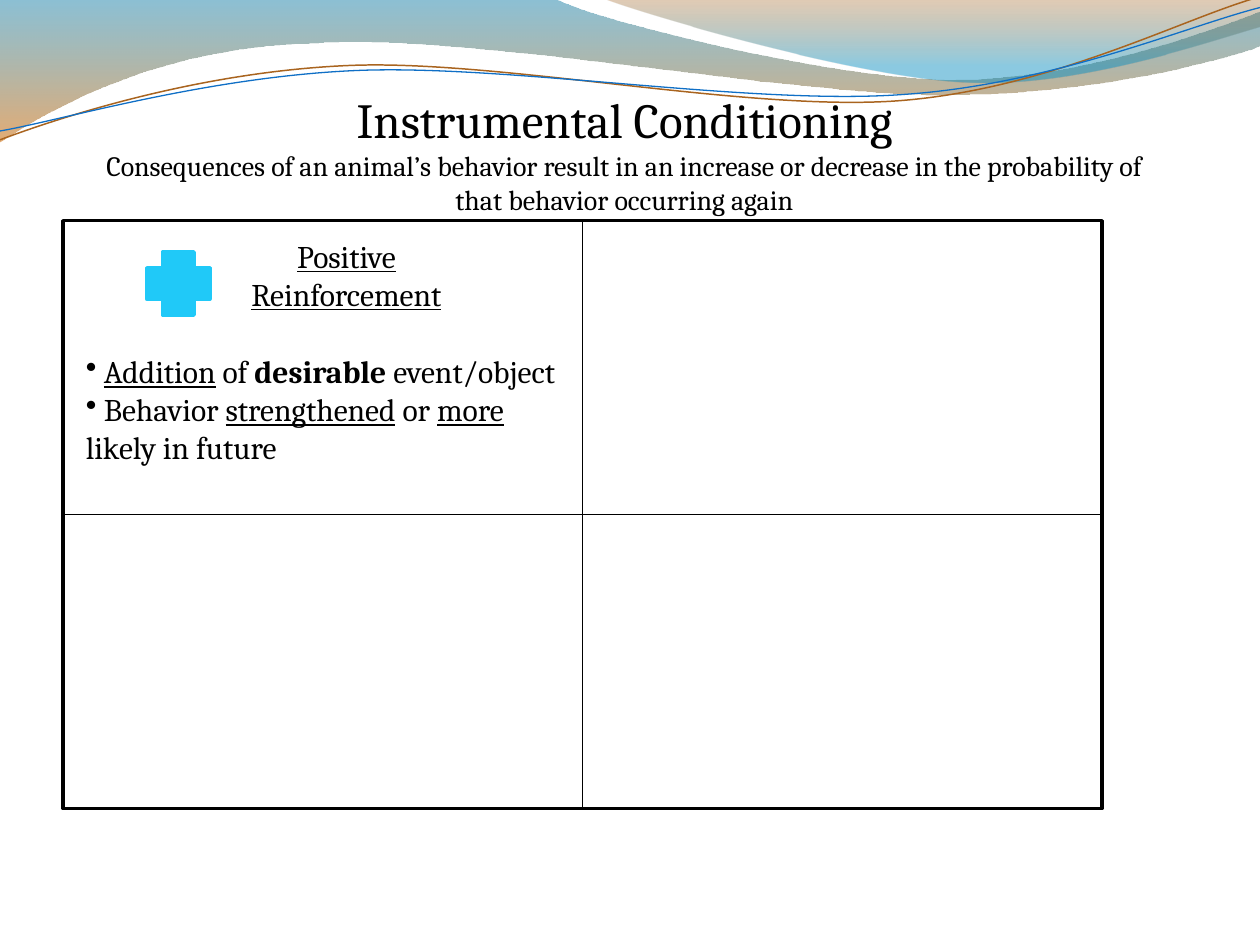
import math

import pptx
import pptx.util
import pptx.dml.color
import pptx.enum.shapes
import pptx.enum.text
import pptx.oxml
import pptx.oxml.ns

Cm = pptx.util.Cm
Pt = pptx.util.Pt
RGB = pptx.dml.color.RGBColor.from_string
NAMESPACE = pptx.oxml.ns.nsdecls("a")
INCH = 2.54
COLORS = {
    "black": "000000",
    "white": "FFFFFF",
    "plus": "20C9F8",
    "teal": "0074A1",
    "orange": "CD6700",
    "brown": "9F5409",
    "cyan": "008BBF",
    "brown line": "A9641F",
    "blue line": "0F6FC6",
}

presentation = pptx.Presentation()
presentation.slide_width = Cm(25.4)
presentation.slide_height = Cm(19.05)
slide = presentation.slides.add_slide(presentation.slide_layouts[6])


def draw_wave(start, segments, close, rotation=0, center=(0, 0)):
    cosine, sine = math.cos(math.radians(-rotation)), math.sin(math.radians(-rotation))
    routes = []
    for segment in [start] + segments:
        route = []
        for x, y in zip(segment[::2], segment[1::2]):
            dx, dy = x - center[0], y - center[1]
            route.append((Cm((center[0] + dx * cosine - dy * sine) * INCH),
                          Cm((center[1] + dx * sine + dy * cosine) * INCH)))
        routes.append(route)
    builder = slide.shapes.build_freeform(*routes[0][0])
    builder.add_line_segments([route[-1] for route in routes[1:]], close=close)
    shape = builder.convert_to_shape()
    straight_parts = list(shape._element.spPr.iter(pptx.oxml.ns.qn("a:lnTo")))
    for straight, route in zip(straight_parts, routes[1:]):
        if len(route) == 3:
            points = "".join(f'<a:pt x="{x - shape.left}" y="{y - shape.top}"/>' for x, y in route)
            curved = pptx.oxml.parse_xml(f"<a:cubicBezTo {NAMESPACE}>{points}</a:cubicBezTo>")
            straight.getparent().replace(straight, curved)
    shape.rotation = rotation
    shape.shadow.inherit = False
    return shape


def add_text(left, top, width, height, paragraphs, alignment, bullet=None):
    shape = slide.shapes.add_textbox(Cm(left), Cm(top), Cm(width), Cm(height))
    frame = shape.text_frame
    frame.word_wrap = True
    frame.auto_size = pptx.enum.text.MSO_AUTO_SIZE.SHAPE_TO_FIT_TEXT
    for index, (size, runs) in enumerate(paragraphs):
        paragraph = frame.add_paragraph() if index else frame.paragraphs[0]
        paragraph.alignment = alignment
        if bullet:
            properties = paragraph._p.get_or_add_pPr()
            for mark in ["buFontTx", f'buChar char="{bullet}"']:
                tag, _, attributes = mark.partition(" ")
                properties.append(pptx.oxml.parse_xml(f"<a:{tag} {NAMESPACE} {attributes}/>"))
        for text, style in runs:
            run = paragraph.add_run()
            run.text = text
            run.font.name = "Cambria"
            run.font.size = Pt(size)
            run.font.color.rgb = RGB(COLORS["black"])
            if style == "underline":
                run.font.underline = True
            if style == "bold":
                run.font.bold = True


bands = [
    ((0, 0), [
        (4.4, -0.01),
        (4.76, 0.17, 6.64, 0.63, 7.58, 0.63),
        (8.53, 0.63, 9.58, 0.26, 10, 0.09),
        (10.01, 0.36),
        (9.83, 0.44, 8.7, 0.76, 7.46, 0.75),
        (6.22, 0.75, 3.82, 0.28, 2.57, 0.34),
        (1.29, 0.36, 0.46, 0.83, -0.01, 1.13),
        (0, 0),
    ], [(0, "teal", 45), (1, "orange", 55)]),
    ((4.79, -0.01), [
        (5.09, 0.11, 6.82, 0.62, 7.69, 0.65),
        (8.56, 0.69, 9.61, 0.32, 10, 0.21),
        (10, 0),
        (4.79, -0.01),
    ], [(0, "brown", 30), (0.8, "cyan", 45)]),
]
for start, segments, stops in bands:
    band = draw_wave(start, segments, True)
    band.line.fill.background()
    band.fill.gradient()
    band.fill.gradient_angle = 270
    for stop, (position, color, opacity) in zip(band.fill.gradient_stops, stops):
        stop.position = position
        stop.color.rgb = RGB(COLORS[color])
    color_elements = band._element.spPr.iter(pptx.oxml.ns.qn("a:srgbClr"))
    for element, (position, color, opacity) in zip(color_elements, stops):
        element.append(pptx.oxml.parse_xml(f'<a:alpha {NAMESPACE} val="{opacity * 1000}"/>'))

curves = [
    ((0, 1.11), [
        (0.48, 0.93, 1.58, 0.57, 2.77, 0.52),
        (3.95, 0.47, 5.93, 0.89, 7.13, 0.8),
        (8.33, 0.71, 9.38, 0.15, 9.98, -0.02),
    ], (4.99, 0.57), "brown line", 0.85),
    ((0, 1.04), [
        (0.47, 0.96, 1.64, 0.61, 2.83, 0.56),
        (4.03, 0.51, 5.97, 0.84, 7.17, 0.75),
        (8.36, 0.67, 9.41, 0.21, 10, 0.06),
    ], (5, 0.59), "blue line", 0.75),
]
for start, segments, center, color, weight in curves:
    curve = draw_wave(start, segments, False, 357.3, center)
    curve.fill.background()
    curve.line.color.rgb = RGB(COLORS[color])
    curve.line.width = Pt(weight)

left, top, width, height = 1.27, 4.45, 20.95, 11.85
right, bottom = left + width, top + height
middle_x, middle_y = left + width / 2, top + height / 2

grid = slide.shapes.add_shape(
    pptx.enum.shapes.MSO_SHAPE.RECTANGLE, Cm(left), Cm(top), Cm(width), Cm(height))

for ends in [(left, middle_y, right, middle_y), (middle_x, top, middle_x, bottom)]:
    divider = slide.shapes.add_connector(
        pptx.enum.shapes.MSO_CONNECTOR.STRAIGHT, *[Cm(value) for value in ends])
    divider.line.color.rgb = RGB(COLORS["black"])
    divider.line.width = Pt(0.75)
    divider._element.spPr.append(pptx.oxml.parse_xml(f"<a:effectLst {NAMESPACE}/>"))

centered = pptx.enum.text.PP_ALIGN.CENTER
add_text(1.69, 1.69, 21.8, 4.02, [
    (28, [("Instrumental Conditioning", None)]),
    (16, [("Consequences of an animal’s behavior result in an increase or decrease "
           "in the probability of that behavior occurring again", None)]),
], centered)
add_text(3.81, 4.65, 6.35, 1.8, [(18, [("Positive Reinforcement", "underline")])], centered)
add_text(1.48, 6.98, 10.16, 3.33, [
    (18, [(" ", None), ("Addition", "underline"), (" of ", None),
          ("desirable", "bold"), (" event/object", None)]),
    (18, [(" Behavior ", None), ("strengthened", "underline"), (" or ", None),
          ("more ", "underline"), ("likely in future", None)]),
], pptx.enum.text.PP_ALIGN.LEFT, "•")

plus = slide.shapes.add_shape(
    pptx.enum.shapes.MSO_SHAPE.CROSS, Cm(2.96), Cm(5.08), Cm(1.27), Cm(1.27))
for shape, fill, line in [(grid, "white", "black"), (plus, "plus", "plus")]:
    shape.shadow.inherit = False
    shape.fill.solid()
    shape.fill.fore_color.rgb = RGB(COLORS[fill])
    shape.line.color.rgb = RGB(COLORS[line])
    shape.line.width = Pt(2)

presentation.save("out.pptx")
